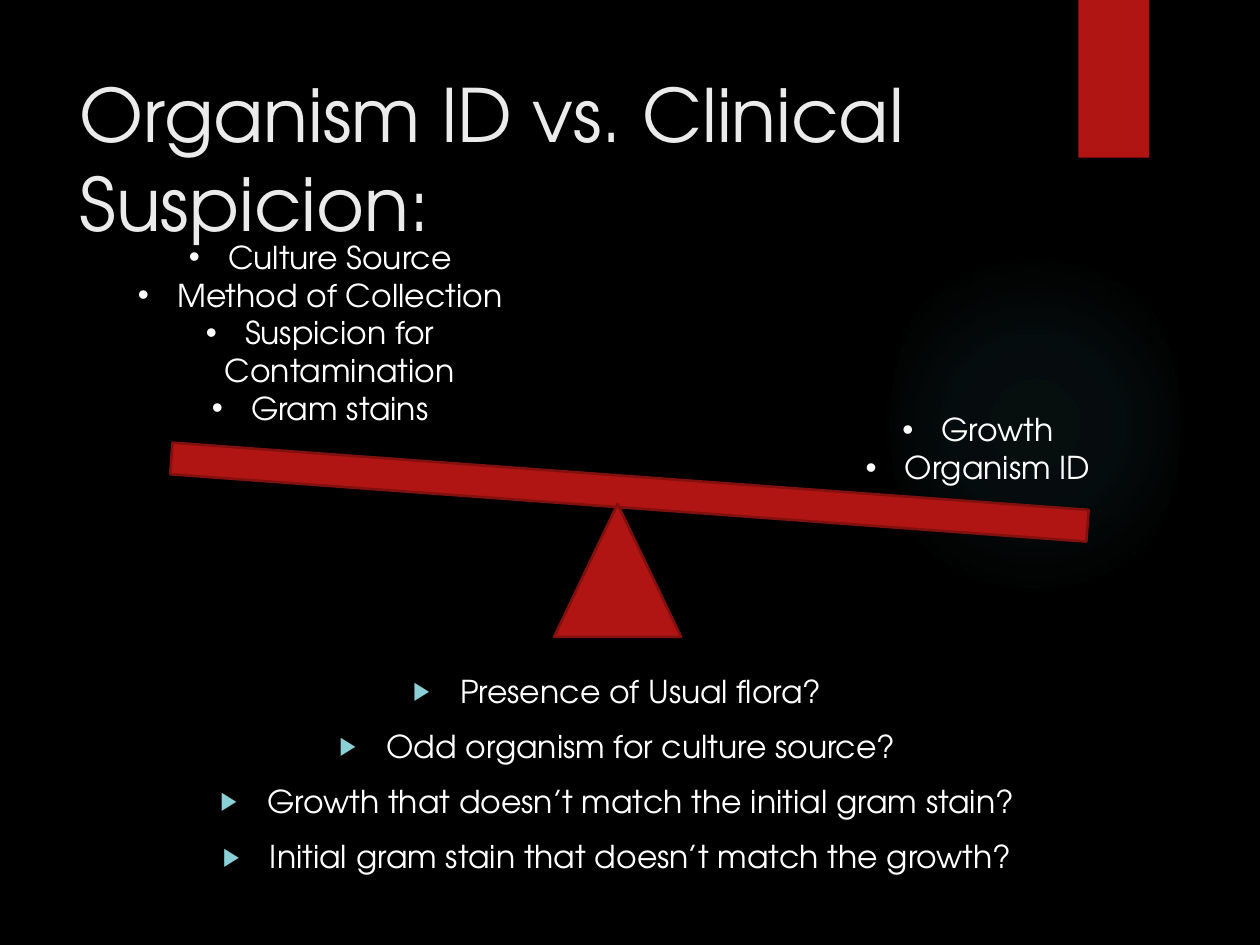
from lxml import etree
from pptx import Presentation
from pptx.dml.color import RGBColor
from pptx.enum import shapes, text
from pptx.oxml import parse_xml
from pptx.oxml.ns import nsdecls, qn
from pptx.util import Cm, Pt

# Content
TITLE = "Organism ID vs. Clinical Suspicion:"
QUESTIONS = [
    "Presence of Usual flora?",
    "Odd organism for culture source?",
    "Growth that doesn’t match the initial gram stain?",
    "Initial gram stain that doesn’t match the growth?",
]
# Each side of the scale: left, top, width, height in cm, then its items
SIDES = [
    ((1.73, 4.67, 9.45, 5.64), ["Culture Source", "Method of Collection",
                                "Suspicion for Contamination", "Gram stains"]),
    ((14.99, 8.15, 9.45, 2.57), ["Growth", "Organism ID"]),
]
GLOW_STOPS = [(0, 7), (36, 6), (69, 0)]  # position %, opacity %

# Style
FONT = "TeX Gyre Adventor"
BLACK = RGBColor(0x00, 0x00, 0x00)
WHITE = RGBColor(0xFF, 0xFF, 0xFF)
PALE = RGBColor(0xEB, 0xEB, 0xEB)
RED = RGBColor(0xB0, 0x15, 0x13)
DARK_RED = RGBColor(0x82, 0x10, 0x0E)
TEAL = RGBColor(0x50, 0xB9, 0xC1)
AQUA = RGBColor(0x8A, 0xD0, 0xD6)


def place(shape, left, top, width, height):
    shape.left, shape.top = Cm(left), Cm(top)
    shape.width, shape.height = Cm(width), Cm(height)


def add_solid(slide, preset, box, fill=None, outline=None):
    shape = slide.shapes.add_shape(preset, *map(Cm, box))
    shape.shadow.inherit = False
    if fill is not None:
        shape.fill.solid()
        shape.fill.fore_color.rgb = fill
    if outline is None:
        shape.line.fill.background()
    else:
        shape.line.color.rgb = outline
        shape.line.width = Pt(1.5)
    return shape


def add_run(paragraph, words, size, color):
    run = paragraph.add_run()
    run.text = words
    run.font.name, run.font.size = FONT, Pt(size)
    run.font.color.rgb = color


def prepare(frame):
    frame.word_wrap = True
    frame.auto_size = text.MSO_AUTO_SIZE.NONE
    frame.vertical_anchor = text.MSO_ANCHOR.TOP


def fill_list(frame, items, mark, mark_color, mark_size, indent, gap):
    prepare(frame)
    for i, item in enumerate(items):
        paragraph = frame.paragraphs[0] if i == 0 else frame.add_paragraph()
        properties = paragraph._p.get_or_add_pPr()
        properties.set("marL", str(Cm(indent)))
        properties.set("indent", str(-Cm(indent)))
        color = etree.SubElement(properties, qn("a:buClr"))
        etree.SubElement(color, qn("a:srgbClr"), val=str(mark_color))
        etree.SubElement(properties, qn("a:buSzPct"), val=str(mark_size * 1000))
        etree.SubElement(properties, qn("a:buFont"), typeface="Arial")
        etree.SubElement(properties, qn("a:buChar"), char=mark)
        paragraph.alignment = text.PP_ALIGN.CENTER
        paragraph.space_before = Pt(gap if i else 0)
        add_run(paragraph, item, 18, WHITE)


def add_glow(slide):
    glow = add_solid(slide, shapes.MSO_SHAPE.OVAL, (17.93, 4.65, 5.87, 7.82))
    stops = "".join(
        f'<a:gs pos="{pos * 1000}"><a:srgbClr val="{TEAL}">'
        f'<a:alpha val="{alpha * 1000}"/></a:srgbClr></a:gs>'
        for pos, alpha in GLOW_STOPS)
    gradient = parse_xml(
        f'<a:gradFill {nsdecls("a")}><a:gsLst>{stops}</a:gsLst><a:path path="circle">'
        '<a:fillToRect l="50000" t="50000" r="50000" b="50000"/></a:path></a:gradFill>')
    glow._element.spPr.find(qn("a:prstGeom")).addnext(gradient)
    slide.shapes._spTree.insert(2, glow._element)  # behind the text


def main():
    deck = Presentation()
    deck.slide_width, deck.slide_height = Cm(25.4), Cm(19.05)
    slide = deck.slides.add_slide(deck.slide_layouts[1])
    slide.background.fill.solid()
    slide.background.fill.fore_color.rgb = BLACK

    # Backdrop
    add_glow(slide)
    add_solid(slide, shapes.MSO_SHAPE.RECTANGLE, (21.74, 0, 1.42, 3.18), RED)

    # Title and questions
    title, questions = slide.placeholders
    place(title, 1.35, 1.27, 19.58, 3.89)
    prepare(title.text_frame)
    heading = title.text_frame.paragraphs[0]
    heading.alignment = text.PP_ALIGN.LEFT
    add_run(heading, TITLE, 42, PALE)
    place(questions, 3.81, 13.41, 17.27, 4.65)
    fill_list(questions.text_frame, QUESTIONS, "▶", AQUA, 80, 0.95, 10)

    # Tilted scale
    beam = add_solid(slide, shapes.MSO_SHAPE.RECTANGLE,
                     (3.43, 9.6, 18.52, 0.64), RED, DARK_RED)
    beam.rotation = 4.2
    add_solid(slide, shapes.MSO_SHAPE.ISOSCELES_TRIANGLE,
              (11.17, 10.16, 2.56, 2.68), RED, DARK_RED)
    for box, items in SIDES:
        side = slide.shapes.add_textbox(*map(Cm, box))
        fill_list(side.text_frame, items, "•", WHITE, 100, 0.79, 0)

    deck.save("out.pptx")


if __name__ == "__main__":
    main()
